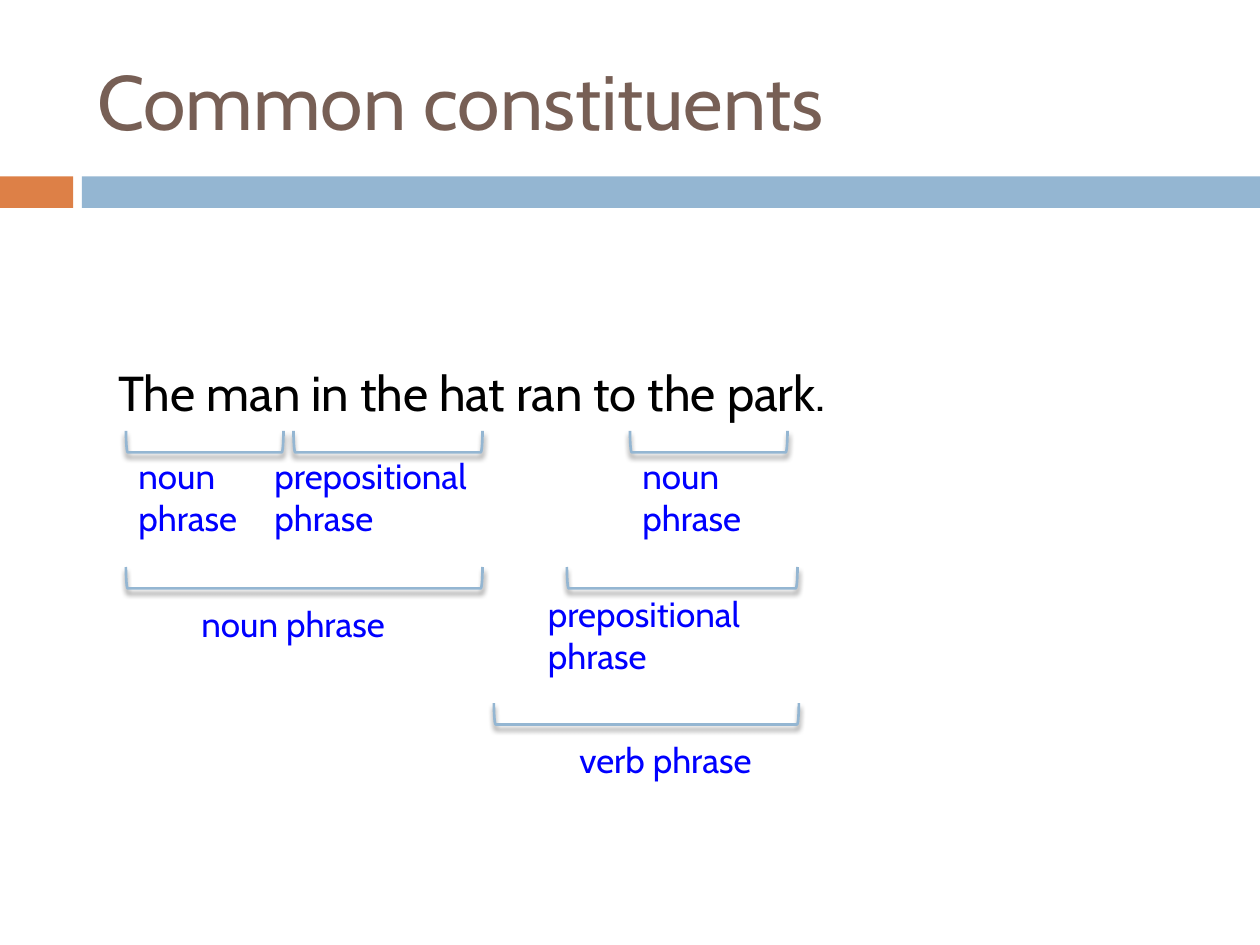
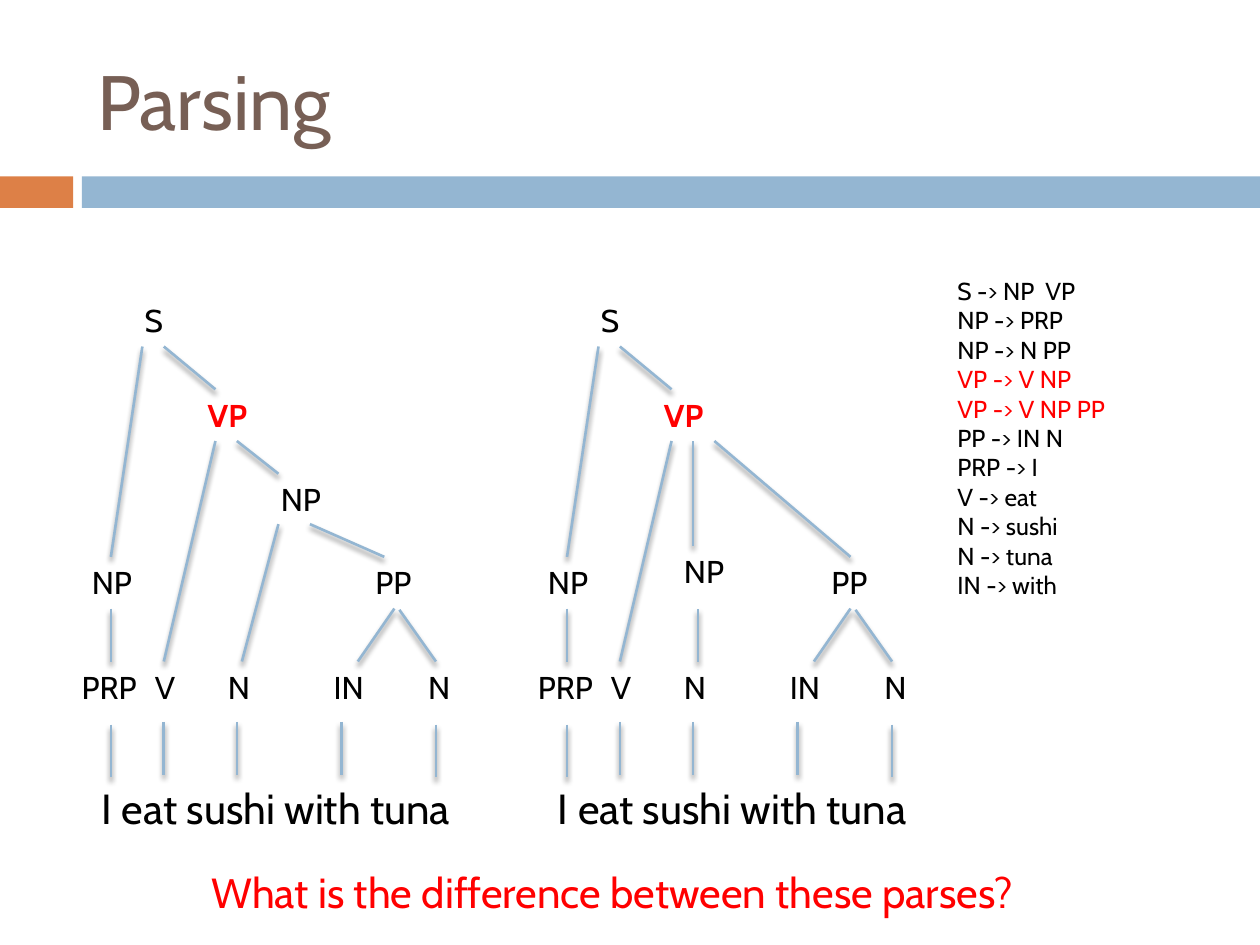
from lxml import etree
from pptx import Presentation
from pptx.dml.color import RGBColor
from pptx.enum.shapes import MSO_CONNECTOR, MSO_SHAPE
from pptx.enum.text import MSO_ANCHOR, MSO_AUTO_SIZE, PP_ALIGN
from pptx.oxml import parse_xml
from pptx.util import Inches, Pt

FONT = "Cabin"
COLORS = {
    "title": "775F55",
    "accent": "DD8047",
    "blue": "94B6D2",
    "text": "000000",
    "label": "0000FF",
    "highlight": "FF0000",
}
SHADOW = (
    '<a:effectLst xmlns:a="http://schemas.openxmlformats.org/drawingml/2006/main">'
    '<a:outerShdw blurRad="38100" dist="30480" dir="5400000" rotWithShape="0">'
    '<a:srgbClr val="000000"><a:alpha val="45000"/></a:srgbClr>'
    "</a:outerShdw></a:effectLst>"
)


def add_text(slide, box, lines, size, color="text", bold=False):
    """Add a text box; each line is a (text, color) pair or plain text."""
    shape = slide.shapes.add_textbox(*[Inches(length) for length in box])
    frame = shape.text_frame
    frame.word_wrap = True
    for index, line in enumerate(lines):
        text, line_color = line if isinstance(line, tuple) else (line, color)
        paragraph = frame.add_paragraph() if index else frame.paragraphs[0]
        for part_index, part in enumerate(text.split("\n")):
            if part_index:
                paragraph.add_line_break()
            run = paragraph.add_run()
            run.text = part
            run.font.name = FONT
            run.font.size = Pt(size)
            run.font.bold = bold
            run.font.color.rgb = RGBColor.from_string(COLORS[line_color])


def style_line(shape):
    """Give a bracket or connector the blue line and soft shadow."""
    shape.line.color.rgb = RGBColor.from_string(COLORS["blue"])
    shape.line.width = Pt(1.5)
    shape._element.spPr.append(parse_xml(SHADOW))


presentation = Presentation()
presentation.slide_width = Inches(10)
presentation.slide_height = Inches(7.5)

# Shared title and bands
slides = []
for title_text in ("Common constituents", "Parsing"):
    slide = presentation.slides.add_slide(presentation.slide_layouts[5])
    slides.append(slide)
    for left, width, color in ((0, 0.58, "accent"), (0.65, 9.35, "blue")):
        band = slide.shapes.add_shape(
            MSO_SHAPE.RECTANGLE, Inches(left), Inches(1.4), Inches(width), Inches(0.25)
        )
        band.shadow.inherit = False
        band.fill.solid()
        band.fill.fore_color.rgb = RGBColor.from_string(COLORS[color])
        band.line.fill.background()
    title = slide.shapes.title
    title.left, title.top = Inches(0.67), Inches(0.25)
    title.width, title.height = Inches(8.92), Inches(1.08)
    title.text_frame.auto_size = MSO_AUTO_SIZE.NONE
    title.text_frame.vertical_anchor = MSO_ANCHOR.MIDDLE
    paragraph = title.text_frame.paragraphs[0]
    paragraph.alignment = PP_ALIGN.LEFT
    run = paragraph.add_run()
    run.text = title_text
    run.font.name = FONT
    run.font.size = Pt(44)
    run.font.color.rgb = RGBColor.from_string(COLORS["title"])

constituents_slide, parsing_slide = slides

# Sentence with bracketed phrases
add_text(constituents_slide, (0.84, 2.83, 7.08, 0.57),
         ["The man in the hat ran to the park."], 28)

BRACKET_DEPTH = 0.17
BRACKET_TOP, BRACKET_STEP = 3.42, 1.08
# row, bracket left, span, label left, label top, label
phrases = [
    (0, 1, 1.25, 1, 3.56, "noun \nphrase"),
    (0, 2.33, 1.5, 2.08, 3.56, "prepositional phrase"),
    (0, 5, 1.25, 5, 3.56, "noun \nphrase"),
    (1, 1, 2.83, 1.5, 4.73, "noun phrase"),
    (1, 4.5, 1.83, 4.25, 4.65, "prepositional phrase"),
    (2, 3.92, 2.42, 4.5, 5.81, "verb phrase"),
]
for row, left, span, label_left, label_top, label in phrases:
    # The bracket is upright before its quarter turn about the centre
    center_x = left + span / 2
    center_y = BRACKET_TOP + row * BRACKET_STEP + BRACKET_DEPTH / 2
    bracket = constituents_slide.shapes.add_shape(
        MSO_SHAPE.LEFT_BRACKET,
        Inches(center_x - BRACKET_DEPTH / 2), Inches(center_y - span / 2),
        Inches(BRACKET_DEPTH), Inches(span),
    )
    bracket.rotation = 270
    bracket.fill.background()
    style_line(bracket)
    label_height = 0.44 if label_top in (4.73, 5.81) else 0.77
    add_text(constituents_slide, (label_left, label_top, 2.17, label_height),
             [label], 20, "label")

# Parse trees: nodes are (text, left, top), branches are (x1, y1, x2, y2)
WORD_TOP, NODE_HEIGHT = 5.25, 0.4
shared_nodes = [
    ("S", 1.05, 2.34), ("VP", 1.55, 3.09), ("NP", 0.63, 4.42), ("PP", 2.88, 4.42),
    ("PRP", 0.55, WORD_TOP), ("V", 1.13, WORD_TOP), ("N", 1.71, WORD_TOP),
    ("IN", 2.55, WORD_TOP), ("N", 3.3, WORD_TOP),
]
shared_branches = [
    (0.88, 4.42, 1.13, 2.75), (1.71, 3.09, 1.3, 2.75),
    (1.3, WORD_TOP, 1.71, 3.5), (0.88, 4.83, 0.88, WORD_TOP),
    (2.84, WORD_TOP, 3.13, 4.83), (3.46, WORD_TOP, 3.17, 4.84),
]
for x, top in ((0.88, 5.75), (1.3, 5.73), (1.88, 5.73), (2.71, 5.73), (3.46, 5.75)):
    shared_branches.append((x, top, x, top + 0.42))

# Each tree: offset, own node, own branches
trees = [
    (0, ("NP", 2.13, 3.76),
     [(1.92, WORD_TOP, 2.21, 4.16), (3.05, 4.42, 2.46, 4.16), (2.21, 3.76, 1.88, 3.5)]),
    (3.62, ("NP", 1.71, 4.33),
     [(1.92, WORD_TOP, 1.92, 4.83), (1.88, 4.33, 1.88, 3.5), (3.13, 4.42, 2.05, 3.5)]),
]
for offset, own_node, own_branches in trees:
    add_text(parsing_slide, (0.71 + offset, 6.16, 4.08, 0.5),
             ["I eat sushi with tuna"], 24)
    for x1, y1, x2, y2 in shared_branches + own_branches:
        branch = parsing_slide.shapes.add_connector(
            MSO_CONNECTOR.STRAIGHT,
            Inches(x1 + offset), Inches(y1), Inches(x2 + offset), Inches(y2),
        )
        style_line(branch)
    for text, left, top in shared_nodes + [own_node]:
        is_verb_phrase = text == "VP"
        add_text(parsing_slide, (left + offset, top, 0.75, NODE_HEIGHT), [text], 18,
                 "highlight" if is_verb_phrase else "text", is_verb_phrase)

# Grammar rules
rules = [
    "S -> NP  VP", "NP -> PRP", "NP -> N PP",
    ("VP -> V NP", "highlight"), ("VP -> V NP PP", "highlight"),
    "PP -> IN N", "PRP -> I", "V -> eat", "N -> sushi", "N -> tuna", "IN -> with",
]
add_text(parsing_slide, (7.5, 2.14, 2.29, 2.69), rules, 14)

# Closing question
add_text(parsing_slide, (1.58, 6.83, 6.7, 0.5),
         ["What is the difference between these parses?"], 24, "highlight")

presentation.save("out.pptx")
